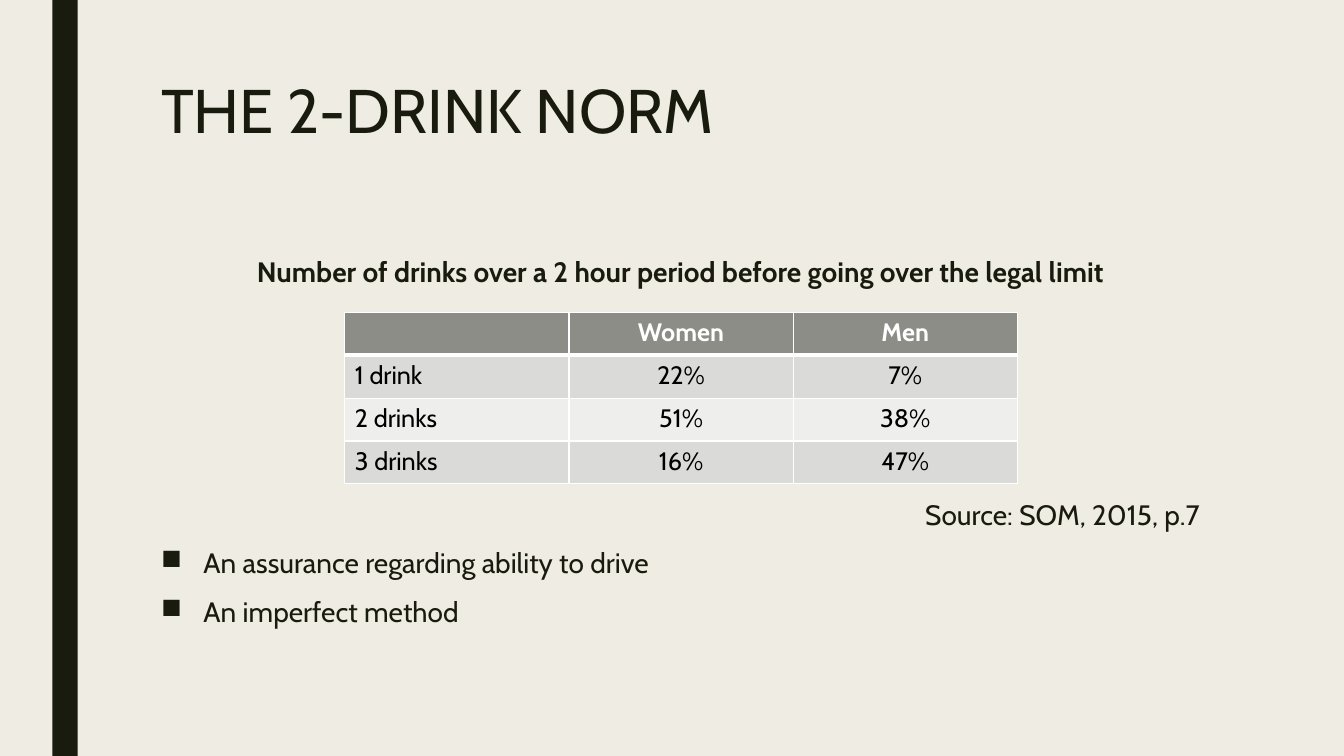
import pptx
import pptx.dml.color
import pptx.enum.shapes
import pptx.enum.text
import pptx.oxml
import pptx.oxml.ns
import pptx.util

Inches = pptx.util.Inches
Pt = pptx.util.Pt
ALIGN = pptx.enum.text.PP_ALIGN
INK = "191B0E"
WHITE = "FFFFFF"
ROWS = [
    ["", "Women", "Men"],
    ["1 drink", "22%", "7%"],
    ["2 drinks", "51%", "38%"],
    ["3 drinks", "16%", "47%"],
]


def apply(item, values):
    """Set each named value on the item."""
    for name, value in values.items():
        setattr(item, name, value)


def color(text):
    """Turn a hex string into a colour."""
    return pptx.dml.color.RGBColor.from_string(text)


def paint(item, tint):
    """Give the item a solid fill."""
    item.fill.solid()
    item.fill.fore_color.rgb = color(tint)


def write(para, text, size, tint=INK, bold=False, **form):
    """Put one formatted run in a paragraph."""
    apply(para, form)
    run = para.add_run()
    run.text = text
    apply(run.font, {"name": "Cabin", "size": Pt(size), "bold": bold})
    run.font.color.rgb = color(tint)


def bullet(para):
    """Give the paragraph a square bullet and a hanging indent."""
    props = para._p.get_or_add_pPr()
    props.set("marL", str(Inches(0.42)))
    props.set("indent", str(-Inches(0.42)))
    mark = pptx.oxml.parse_xml(
        f'<a:buChar {pptx.oxml.ns.nsdecls("a")} char="■"/>')
    props.append(mark)


def add_frame(slide, left, top, width, height):
    """Add a wrapping text box and return its frame."""
    box = slide.shapes.add_textbox(
        Inches(left), Inches(top), Inches(width), Inches(height))
    box.text_frame.word_wrap = True
    return box.text_frame


def add_bar(slide):
    """Draw the dark band at the left."""
    bar = slide.shapes.add_shape(
        pptx.enum.shapes.MSO_SHAPE.RECTANGLE,
        Inches(0.52), 0, Inches(0.25), Inches(7.5))
    bar.shadow.inherit = False
    paint(bar, INK)
    bar.line.fill.background()


def add_body(slide):
    """Write the caption, source and bullet points."""
    frame = add_frame(slide, 1.5, 2.5, 10.5, 3.92)
    lines = [
        ("Number of drinks over a 2 hour period before going over "
         "the legal limit", ALIGN.CENTER, 10, True),
        ("Source: SOM, 2015, p.7", ALIGN.RIGHT, 149, False),
        ("An assurance regarding ability to drive", ALIGN.LEFT, 10, False),
        ("An imperfect method", ALIGN.LEFT, 10, False),
    ]
    for row, (text, align, gap, bold) in enumerate(lines):
        para = frame.add_paragraph() if row else frame.paragraphs[0]
        write(para, text, 20, bold=bold, alignment=align, line_spacing=0.94,
              space_before=Pt(gap), space_after=Pt(2))
        if align == ALIGN.LEFT:
            bullet(para)


def edge(cell, side, width):
    """Draw one white border of a cell."""
    cell._tc.get_or_add_tcPr().append(pptx.oxml.parse_xml(
        f'<a:ln{side} {pptx.oxml.ns.nsdecls("a")} w="{Pt(width)}">'
        f'<a:solidFill><a:srgbClr val="{WHITE}"/></a:solidFill></a:ln{side}>'))


def add_table(slide):
    """Build the table of drinks by sex."""
    table = slide.shapes.add_table(
        len(ROWS), len(ROWS[0]), Inches(3.42), Inches(3.1),
        Inches(6.67), Inches(1.7)).table
    for row, texts in enumerate(ROWS):
        fill = "8C8D86" if row == 0 else "DADBD9" if row % 2 else "EEEEED"
        for col, text in enumerate(texts):
            cell = table.cell(row, col)
            for side in "LRTB":
                thick = (row, side) in [(0, "B"), (1, "T")]
                edge(cell, side, 3 if thick else 1)
            paint(cell, fill)
            write(cell.text_frame.paragraphs[0], text, 18,
                  "000000" if row else WHITE, row == 0,
                  alignment=ALIGN.CENTER if col else ALIGN.LEFT)


def main():
    """Build and save the slide."""
    deck = pptx.Presentation()
    apply(deck, {"slide_width": Inches(13.33), "slide_height": Inches(7.5)})
    slide = deck.slides.add_slide(deck.slide_layouts[6])
    paint(slide.background, "EFEDE3")
    add_bar(slide)
    title = add_frame(slide, 1.5, 0.75, 10.5, 1.62)
    write(title.paragraphs[0], "THE 2-DRINK NORM", 44, line_spacing=0.89)
    add_body(slide)
    add_table(slide)
    deck.save("out.pptx")


if __name__ == "__main__":
    main()
